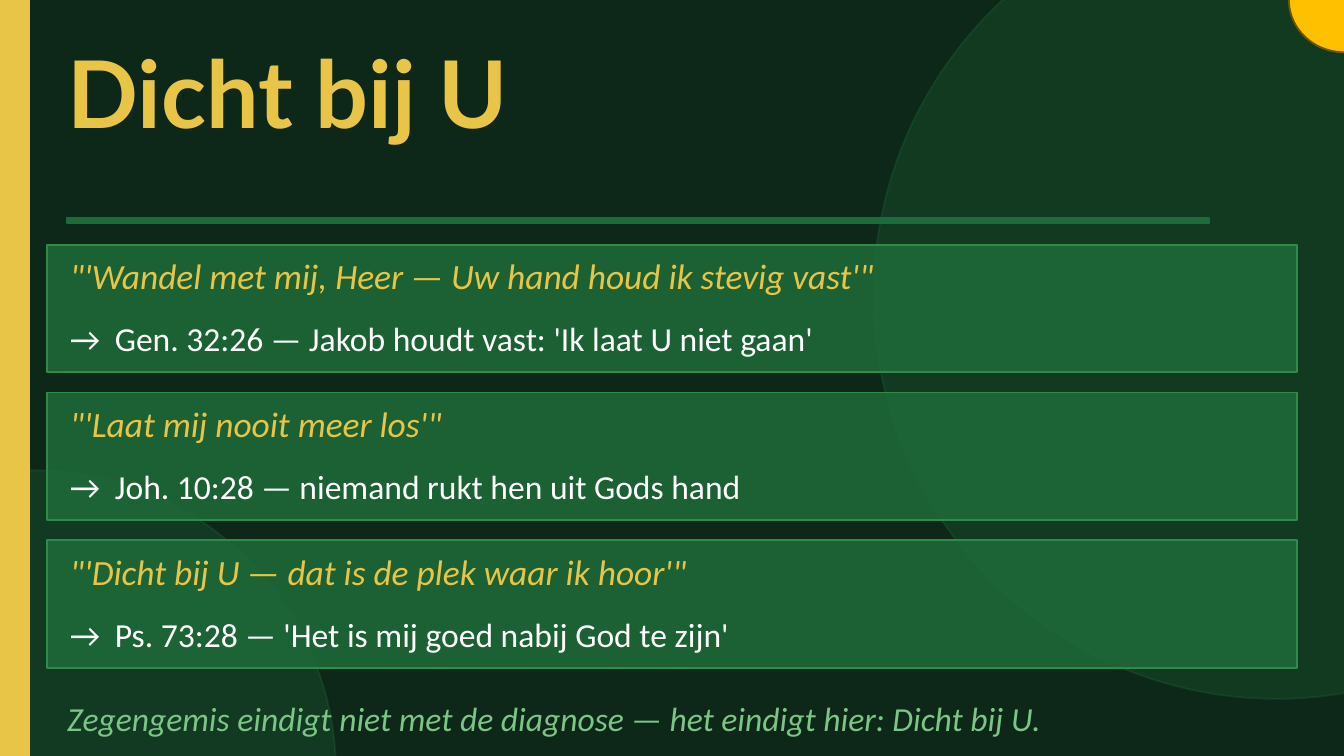
from lxml.etree import SubElement
from pptx import Presentation
from pptx.dml.color import RGBColor
from pptx.enum.shapes import MSO_SHAPE
from pptx.enum.text import MSO_ANCHOR, MSO_AUTO_SIZE, PP_ALIGN
from pptx.oxml.ns import qn
from pptx.util import Pt

PX = 4572  # EMU per px, 200 px to the inch
SLIDE_WIDTH, SLIDE_HEIGHT = 2000, 1125

NIGHT, FOREST, LEAF, MINT = "0D2818", "1E6B3A", "2E8B4A", "7DC487"
GOLD, WHITE, AMBER, BROWN = "E8C547", "FFFFFF", "FFC000", "705400"

CARD_TOP, CARD_STEP = 364, 220
VERSES = [
    ("\"'Wandel met mij, Heer — Uw hand houd ik stevig vast'\"",
     "→\tGen. 32:26 — Jakob houdt vast: 'Ik laat U niet gaan'"),
    ("\"'Laat mij nooit meer los'\"",
     "→\tJoh. 10:28 — niemand rukt hen uit Gods hand"),
    ("\"'Dicht bij U — dat is de plek waar ik hoor'\"",
     "→\tPs. 73:28 — 'Het is mij goed nabij God te zijn'"),
]


def px(*lengths):
    return [length * PX for length in lengths]


def paint(color_format, color):
    color_format.rgb = RGBColor.from_string(color)


def set_fill(fill, color, opacity=100):
    fill.solid()
    paint(fill.fore_color, color)
    if opacity < 100:
        srgb = fill._xPr.find(qn("a:solidFill")).find(qn("a:srgbClr"))
        SubElement(srgb, qn("a:alpha"), val=str(opacity * 1000))


def add_panel(slide, kind, box, color, edge=None, opacity=100, edge_opacity=100):
    panel = slide.shapes.add_shape(kind, *px(*box))
    panel.shadow.inherit = False
    set_fill(panel.fill, color, opacity)
    set_fill(panel.line.fill, edge or color, edge_opacity)
    panel.line.width = Pt(1)


def write(holder, text, size, color, font="Calibri", bold=False, italic=False):
    frame = holder.text_frame
    frame.text = text
    frame.word_wrap = True
    frame.auto_size = MSO_AUTO_SIZE.NONE
    frame.vertical_anchor = MSO_ANCHOR.MIDDLE
    frame.margin_left = frame.margin_right = 0
    frame.margin_top = frame.margin_bottom = 0
    paragraph = frame.paragraphs[0]
    paragraph.alignment = PP_ALIGN.LEFT
    for run in paragraph.runs:
        run.font.name = font
        run.font.size = Pt(size)
        run.font.bold = bold
        run.font.italic = italic
        paint(run.font.color, color)
    return paragraph


def add_line_of_text(slide, box, text, size, color, italic=False):
    holder = slide.shapes.add_textbox(*px(*box))
    return write(holder, text, size, color, italic=italic)


def add_title(slide, text):
    title = slide.shapes.title
    title.left, title.top, title.width, title.height = px(100, 56, 1800, 160)
    write(title, text, 50, GOLD, font="Lato", bold=True)


def add_verse_card(slide, top, lyric, reference):
    add_panel(slide, MSO_SHAPE.RECTANGLE, (70, top, 1860, 190), FOREST, LEAF, 85)
    add_line_of_text(slide, (104, top + 10, 1800, 72), lyric, 19, GOLD, italic=True)
    paragraph = add_line_of_text(slide, (104, top + 104, 1800, 70), reference, 18, WHITE)
    # Tab stop that sets the gap after the arrow
    tabs = SubElement(paragraph._p.get_or_add_pPr(), qn("a:tabLst"))
    SubElement(tabs, qn("a:tab"), pos=str(67 * PX), algn="l")


def main():
    deck = Presentation()
    deck.slide_width, deck.slide_height = px(SLIDE_WIDTH, SLIDE_HEIGHT)
    slide = deck.slides.add_slide(deck.slide_layouts[5])
    set_fill(slide.background.fill, NIGHT)

    # Backdrop circles and side bar
    add_panel(slide, MSO_SHAPE.OVAL, (1300, -160, 1200, 1200), FOREST,
              opacity=28, edge_opacity=28)
    add_panel(slide, MSO_SHAPE.OVAL, (-400, 700, 900, 900), LEAF,
              opacity=18, edge_opacity=18)
    add_panel(slide, MSO_SHAPE.RECTANGLE, (0, 0, 44, SLIDE_HEIGHT), GOLD)

    # Title and rule
    add_title(slide, "Dicht bij U")
    add_panel(slide, MSO_SHAPE.RECTANGLE, (100, 324, 1700, 8), FOREST)

    # Verse cards
    for row, (lyric, reference) in enumerate(VERSES):
        add_verse_card(slide, CARD_TOP + row * CARD_STEP, lyric, reference)

    # Closing line and corner sun
    add_line_of_text(
        slide, (100, 1030, 1800, 76),
        "Zegengemis eindigt niet met de diagnose — het eindigt hier: Dicht bij U.",
        18, MINT, italic=True)
    add_panel(slide, MSO_SHAPE.OVAL, (1918, -78, 166, 156), AMBER, BROWN)

    deck.save("out.pptx")


if __name__ == "__main__":
    main()
